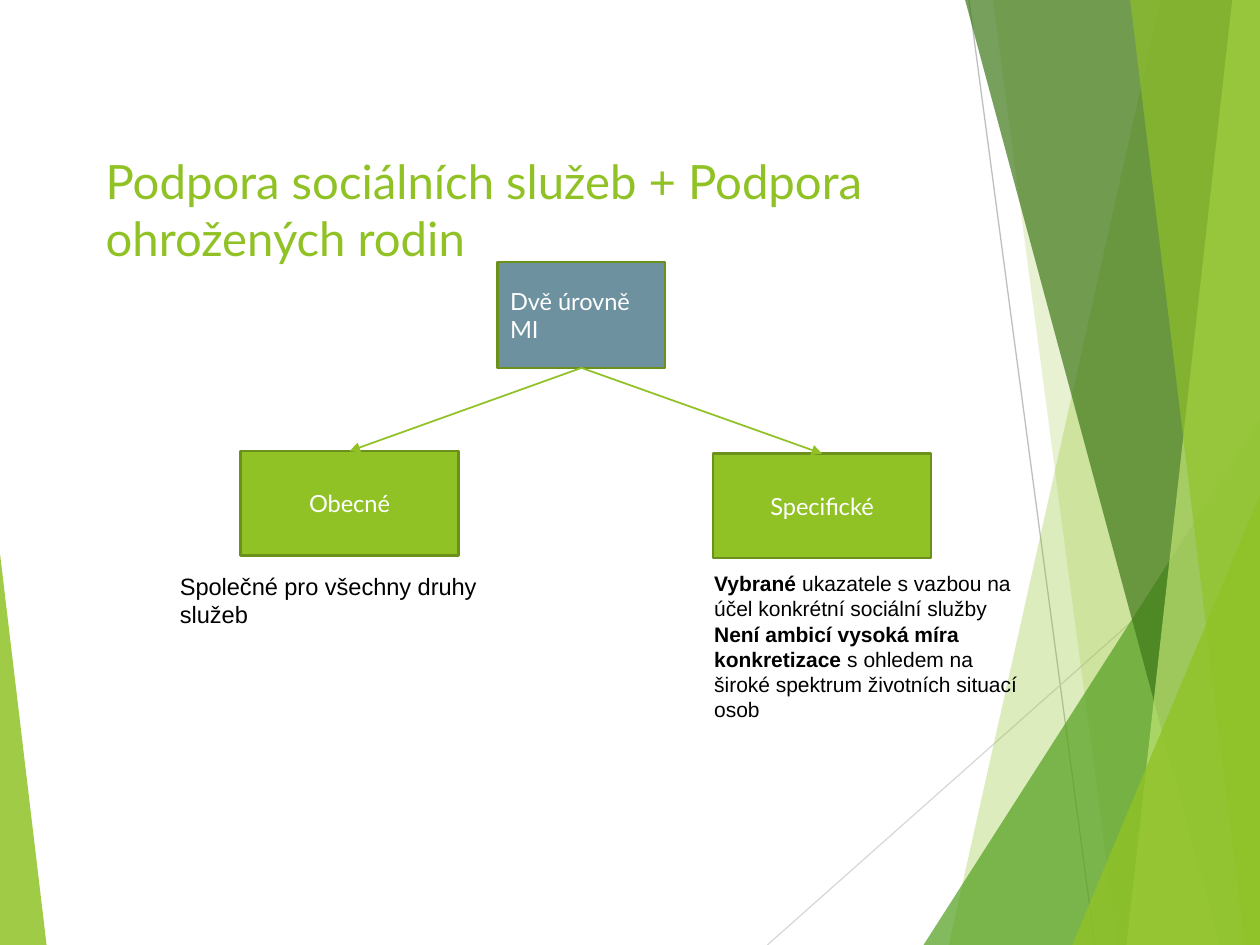
from lxml import etree
from pptx import Presentation
from pptx.dml.color import RGBColor
from pptx.enum.shapes import MSO_CONNECTOR, MSO_SHAPE
from pptx.enum.text import MSO_ANCHOR, PP_ALIGN
from pptx.oxml.ns import qn
from pptx.util import Inches, Pt

STRAIGHT = MSO_CONNECTOR.STRAIGHT
RECTANGLE, TRIANGLE = MSO_SHAPE.RECTANGLE, MSO_SHAPE.ISOSCELES_TRIANGLE
LEFT, CENTER = PP_ALIGN.LEFT, PP_ALIGN.CENTER
TOP, MIDDLE = MSO_ANCHOR.TOP, MSO_ANCHOR.MIDDLE
COLUMNS, ROWS = 100, 75
TOP_SITE, BOTTOM_SITE = 0, 2
HEADING_FONT, BODY_FONT = "Lato", "Arial"
COLORS = {
    "lime": "90C226", "green": "54A021", "forest": "3F7819", "pale": "C0E474",
    "olive": "6B901C", "slate": "6E91A0", "gray": "BFBFBF", "silver": "D9D9D9",
    "white": "FFFFFF", "black": "000000",
}


class SlideBuilder:
    """Draws on one slide; lengths are grid columns and rows."""

    def __init__(self, presentation):
        self.column = presentation.slide_width / COLUMNS
        self.row = presentation.slide_height / ROWS
        self.slide = presentation.slides.add_slide(presentation.slide_layouts[6])
        self.shapes = self.slide.shapes

    def place(self, *lengths):
        """Turns alternating columns and rows into EMU."""
        units = (self.column, self.row)
        return [round(length * units[i % 2]) for i, length in enumerate(lengths)]

    def color(self, name):
        return RGBColor.from_string(COLORS[name])

    def paint(self, shape, color, opacity=100):
        shape.shadow.inherit = False
        shape.line.fill.background()
        shape.fill.solid()
        shape.fill.fore_color.rgb = self.color(color)
        if opacity < 100:
            rgb = shape._element.spPr.find(qn("a:solidFill")).find(qn("a:srgbClr"))
            etree.SubElement(rgb, qn("a:alpha"), val=str(opacity * 1000))

    def band(self, top_column, bottom_column, color, opacity):
        """Slanted band reaching from its left edge to the right slide edge."""
        start, *corners = [
            self.place(*point) for point in
            ((top_column, 0), (COLUMNS, 0), (COLUMNS, ROWS), (bottom_column, ROWS))
        ]
        builder = self.shapes.build_freeform(*start)
        builder.add_line_segments(corners, close=True)
        self.paint(builder.convert_to_shape(), color, opacity)

    def corner(self, left, top, width, apex, color, opacity):
        """Triangle standing on the bottom slide edge."""
        box = self.place(left, top, width, ROWS - top)
        shape = self.shapes.add_shape(TRIANGLE, *box)
        shape.adjustments[0] = apex
        self.paint(shape, color, opacity)

    def line(self, points, color, width):
        connector = self.shapes.add_connector(STRAIGHT, *self.place(*points))
        connector.line.color.rgb = self.color(color)
        connector.line.width = Pt(width)
        etree.SubElement(connector._element.spPr, qn("a:effectLst"))
        return connector

    def arrow(self, parent, child):
        connector = self.line((0, 0, 1, 1), "lime", 1)
        connector.begin_connect(parent, BOTTOM_SITE)
        connector.end_connect(child, TOP_SITE)
        outline = connector._element.spPr.find(qn("a:ln"))
        etree.SubElement(outline, qn("a:tailEnd"), type="triangle")

    def fill_text(self, shape, paragraphs, size, font, color, align=LEFT, anchor=TOP):
        """Each paragraph is a list of (text, bold) runs."""
        frame = shape.text_frame
        frame.word_wrap = True
        frame.vertical_anchor = anchor
        for index, runs in enumerate(paragraphs):
            paragraph = frame.add_paragraph() if index else frame.paragraphs[0]
            paragraph.alignment = align
            paragraph.font.size = Pt(size)
            paragraph.font.name = font
            paragraph.font.color.rgb = self.color(color)
            for text, bold in runs:
                run = paragraph.add_run()
                run.text = text
                if bold:
                    run.font.bold = True

    def text(self, box, paragraphs, size, font=BODY_FONT, color="black"):
        shape = self.shapes.add_textbox(*self.place(*box))
        self.fill_text(shape, paragraphs, size, font, color)

    def node(self, box, label, fill="lime", align=CENTER):
        shape = self.shapes.add_shape(RECTANGLE, *self.place(*box))
        self.paint(shape, fill)
        shape.line.color.rgb = self.color("olive")
        shape.line.width = Pt(1.5)
        self.fill_text(shape, [[(label, False)]], 13.5, HEADING_FONT, "white",
                       align, MIDDLE)
        return shape


def draw_background(builder):
    builder.line((76.9, 0, 86.9, ROWS), "gray", 0.75)
    builder.line((COLUMNS, 40.3, 60.9, ROWS), "silver", 0.75)
    builder.band(92.1, 75.3, "lime", 30)
    builder.band(78.8, 88.7, "lime", 20)
    builder.corner(73.3, 33.3, 26.7, 1, "green", 72)
    builder.band(76.6, 96.8, "forest", 70)
    builder.band(97.8, 89.4, "pale", 70)
    builder.band(89.7, 98.8, "lime", 65)
    builder.corner(85.1, 39.3, 14.9, 1, "lime", 80)
    builder.corner(0, 43.9, 3.7, 0, "lime", 85)


def draw_content(builder):
    title = "Podpora sociálních služeb + Podpora ohrožených rodin"
    builder.text((7.4, 11.6, 70.5, 10.9), [[(title, False)]], 27, HEADING_FONT, "lime")

    general = builder.node((19.1, 35.8, 17.3, 8.3), "Obecné")
    specific = builder.node((56.6, 36, 17.3, 8.3), "Specifické")
    builder.text((55.7, 44.8, 27.4, 11.1), [
        [("Vybrané ", True),
         ("ukazatele s vazbou na účel konkrétní sociální služby", False)],
        [("Není ambicí vysoká míra konkretizace ", True),
         ("s ohledem na široké spektrum životních situací osob", False)],
    ], 12)
    builder.text((13.3, 44.9, 27.4, 5.6),
                 [[("Společné pro všechny druhy služeb", False)]], 13.5)
    levels = builder.node((39.5, 20.8, 13.3, 8.4), "Dvě úrovně MI", "slate", LEFT)
    for child in (general, specific):
        builder.arrow(levels, child)


def main():
    presentation = Presentation()
    presentation.slide_width, presentation.slide_height = Inches(10), Inches(7.5)
    builder = SlideBuilder(presentation)
    draw_background(builder)
    draw_content(builder)
    presentation.save("out.pptx")


if __name__ == "__main__":
    main()
